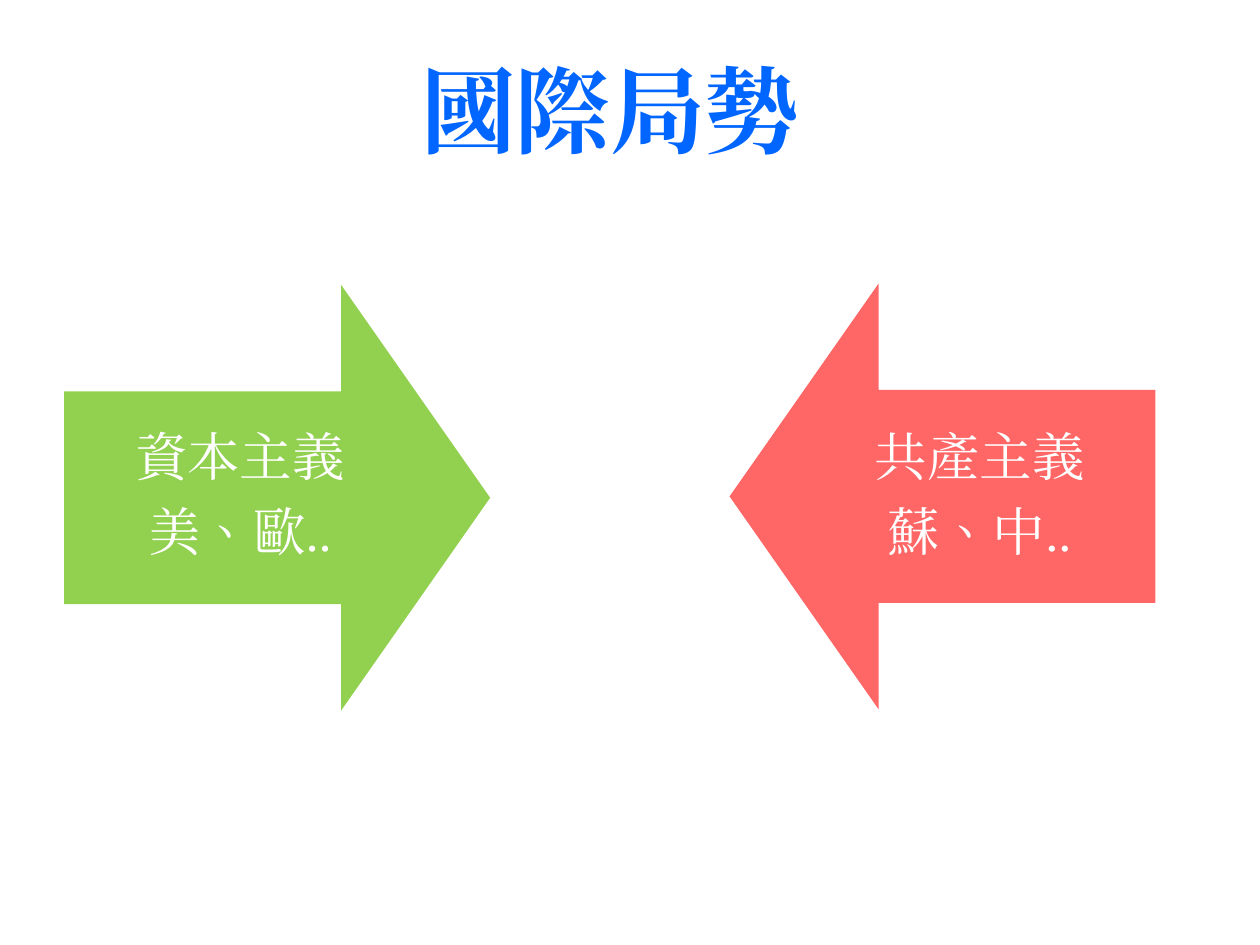
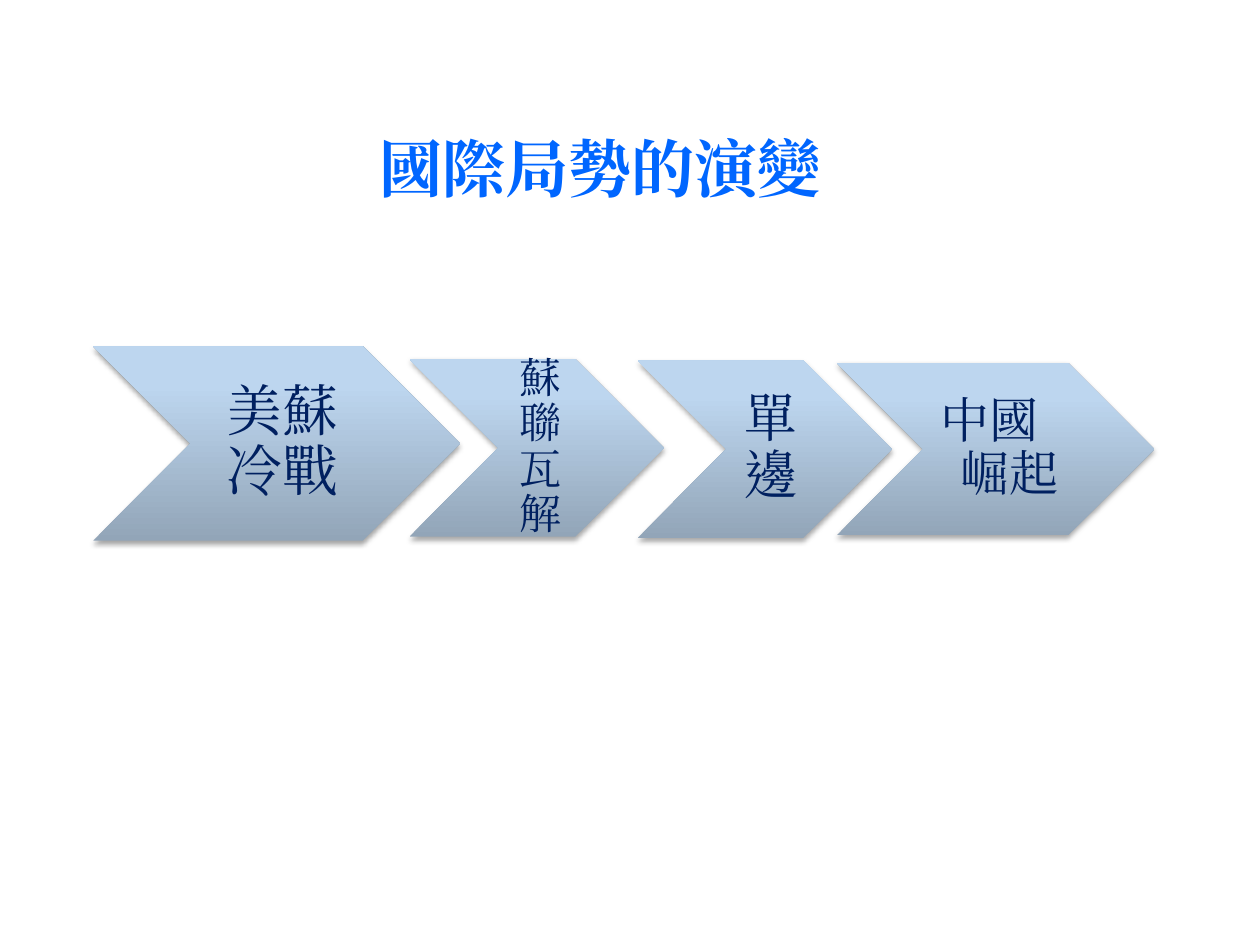
from dataclasses import dataclass

import pptx
import pptx.util
import pptx.dml.color
import pptx.enum.lang
import pptx.enum.shapes
import pptx.enum.text
import pptx.oxml
import pptx.oxml.ns
from lxml import etree
from pptx.util import Inches

COLORS = {
    "title": "0066FF",
    "capitalism": "92D050",
    "communism": "FF6666",
    "arrow_text": "FFFFFF",
    "step_text": "002060",
    "step_bottom": "92A5B8",
    "step_light": "BDD6EF",
    "step_top": "BDD7F1",
    "shadow": "000000",
}
FONT = "Times New Roman"
SHAPE = pptx.enum.shapes.MSO_SHAPE
ALIGN = pptx.enum.text.PP_ALIGN
ANCHOR = pptx.enum.text.MSO_ANCHOR
A_NS = pptx.oxml.ns.nsdecls("a")
BODY = {"line_spacing": 0.9}
ARROW_SIZE = 3.38

GRADIENT = f"""<a:gradFill {A_NS} rotWithShape="1"><a:gsLst>
<a:gs pos="0"><a:srgbClr val="{COLORS['step_bottom']}"/></a:gs>
<a:gs pos="80000"><a:srgbClr val="{COLORS['step_light']}"/></a:gs>
<a:gs pos="100000"><a:srgbClr val="{COLORS['step_top']}"/></a:gs>
</a:gsLst><a:lin ang="16200000" scaled="0"/></a:gradFill>"""
SHADOW = f"""<a:effectLst {A_NS}>
<a:outerShdw blurRad="39370" dist="22860" dir="5400000" rotWithShape="0">
<a:srgbClr val="{COLORS['shadow']}"><a:alpha val="35000"/></a:srgbClr>
</a:outerShdw></a:effectLst>"""


@dataclass
class Title:
    text: str
    left: float
    top: float
    size: int


@dataclass
class Arrow:
    lines: list[str]
    left: float
    top: float
    text_left: float
    rotation: int
    color: str


@dataclass
class Step:
    lines: list[str]
    left: float
    top: float
    width: float
    height: float
    size: int
    inset: float
    indents: tuple[float, ...] = ()


ARROWS = [
    Arrow(["資本主義", "美、歐.."], 0.51, 2.26, 0.51, 270, "capitalism"),
    Arrow(["共產主義", "蘇、中.."], 5.79, 2.25, 6.38, 90, "communism"),
]
STEPS = [
    Step(["美蘇冷戰"], 0.74, 2.75, 2.91, 1.54, 32, 0.14),
    Step(["蘇聯瓦解"], 3.25, 2.85, 2.02, 1.41, 24, 0.1),
    Step(["單邊"], 5.06, 2.86, 2.02, 1.41, 30, 0.13),
    Step(["中國", "崛起"], 6.64, 2.88, 2.52, 1.37, 28, 0.12, (0.02, 0.18)),
]


def set_all(target, values: dict) -> None:
    for name, value in values.items():
        setattr(target, name, value)


def rgb(name: str) -> pptx.dml.color.RGBColor:
    return pptx.dml.color.RGBColor.from_string(COLORS[name])


def add_text(s, box: tuple, lines: list[str], size: int, color: str, anchor,
             insets: tuple = (0.1, 0.05, 0.1, 0.05), bold: bool = False,
             paragraph: dict | None = None, indents: tuple = ()) -> None:
    tf = s.shapes.add_textbox(*map(Inches, box)).text_frame
    sides = ("margin_left", "margin_top", "margin_right", "margin_bottom")
    set_all(tf, {"word_wrap": True, "vertical_anchor": anchor,
                 **dict(zip(sides, map(Inches, insets)))})
    for i, text in enumerate(lines):
        p = tf.paragraphs[0] if i == 0 else tf.add_paragraph()
        set_all(p, {"alignment": ALIGN.CENTER, **(paragraph or {})})
        if indents:
            p.alignment = ALIGN.LEFT
            p._p.get_or_add_pPr().set("marL", str(Inches(indents[i])))
        r = p.add_run()
        r.text = text
        set_all(r.font, {
            "size": pptx.util.Pt(size), "name": FONT, "bold": bold,
            "language_id": pptx.enum.lang.MSO_LANGUAGE_ID.TRADITIONAL_CHINESE,
        })
        r.font.color.rgb = rgb(color)
        ea = etree.SubElement(r._r.get_or_add_rPr(), pptx.oxml.ns.qn("a:ea"))
        ea.set("typeface", FONT)


def add_title(s, title: Title) -> None:
    add_text(s, (title.left, title.top, 8.67, 1), [title.text], title.size,
             "title", ANCHOR.BOTTOM, bold=True)


def add_arrow(s, arrow: Arrow) -> None:
    box = (arrow.left, arrow.top, ARROW_SIZE, ARROW_SIZE)
    sp = s.shapes.add_shape(SHAPE.DOWN_ARROW, *map(Inches, box))
    sp.rotation = arrow.rotation
    sp.adjustments[0], sp.adjustments[1] = 0.5, 0.35
    sp.shadow.inherit = False
    sp.fill.solid()
    sp.fill.fore_color.rgb = rgb(arrow.color)
    sp.line.fill.background()
    add_text(s, (arrow.text_left, 3.1, 2.79, ARROW_SIZE / 2), arrow.lines, 30,
             "arrow_text", ANCHOR.MIDDLE, (0.23,) * 4,
             paragraph={**BODY, "space_after": pptx.util.Pt(10.5)})


def add_step(s, step: Step) -> None:
    box = (step.left, step.top, step.width, step.height)
    sp = s.shapes.add_shape(SHAPE.CHEVRON, *map(Inches, box))
    sp.line.fill.background()
    props = sp._element.spPr
    props.find(pptx.oxml.ns.qn("a:prstGeom")).addnext(
        pptx.oxml.parse_xml(GRADIENT))
    props.append(pptx.oxml.parse_xml(SHADOW))
    text_box = (step.left + step.height / 2, step.top,
                step.width - step.height, step.height)
    add_text(s, text_box, step.lines, step.size, "step_text", ANCHOR.MIDDLE,
             (step.inset, 0.04, 0.04, 0.04), paragraph=BODY,
             indents=step.indents)


def main() -> None:
    prs = pptx.Presentation()
    set_all(prs, {"slide_width": Inches(10), "slide_height": Inches(7.5)})
    slides = [
        (Title("國際局勢", 0.51, 0.36, 54), add_arrow, ARROWS),
        (Title("國際局勢的演變", 0.43, 0.68, 36), add_step, STEPS),
    ]
    for title, draw, items in slides:
        s = prs.slides.add_slide(prs.slide_layouts[6])
        add_title(s, title)
        for item in items:
            draw(s, item)
    prs.save("out.pptx")


if __name__ == "__main__":
    main()
